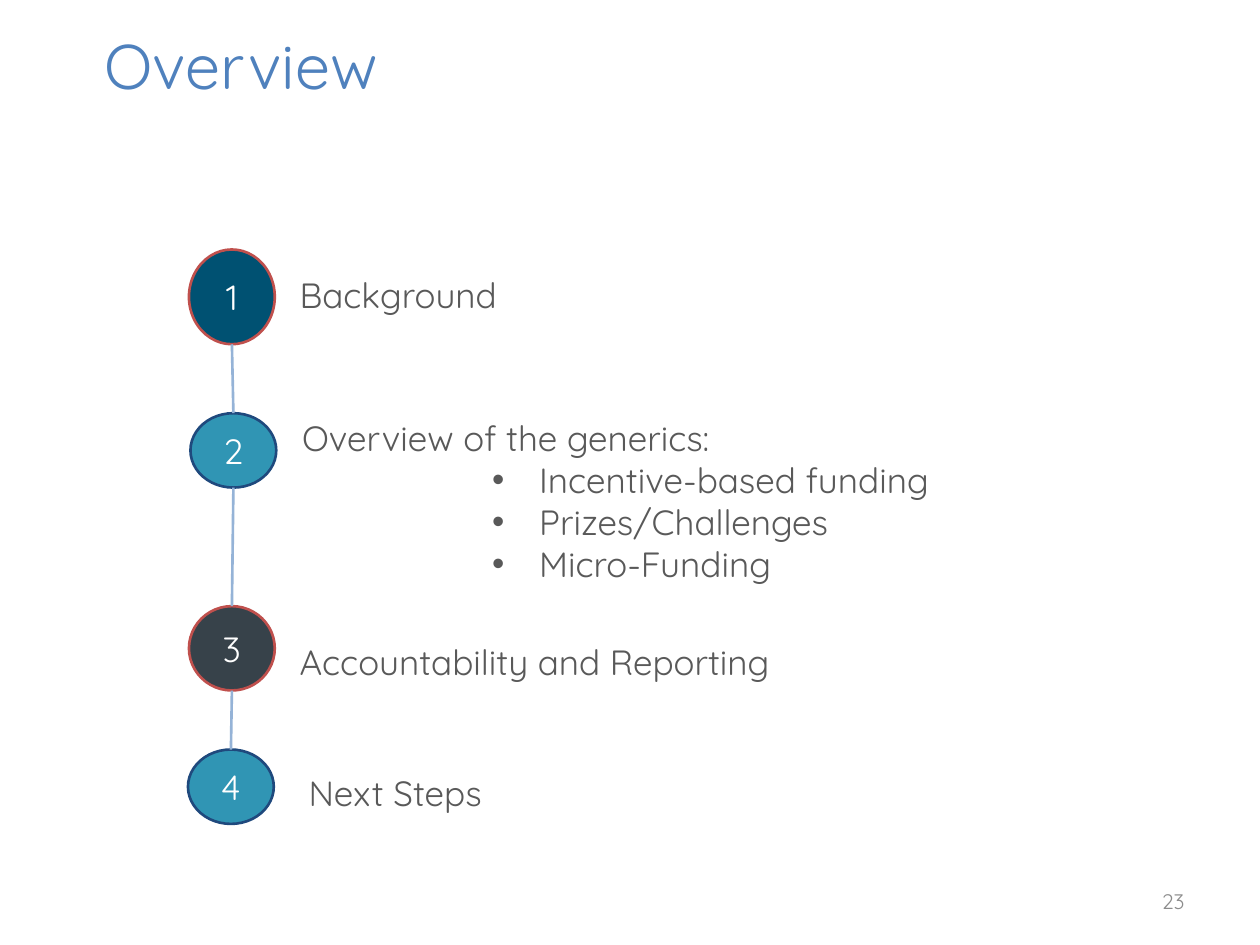
import pptx
import pptx.dml.color
import pptx.enum.shapes
import pptx.enum.text
import pptx.oxml.ns
import pptx.util
from lxml import etree

Cm, Pt = pptx.util.Cm, pptx.util.Pt
ALIGN = pptx.enum.text.PP_ALIGN
ANCHOR = pptx.enum.text.MSO_ANCHOR
SHAPES = pptx.enum.shapes.MSO_SHAPE
CONNECTOR = pptx.enum.shapes.MSO_CONNECTOR
qn = pptx.oxml.ns.qn

FONT = "Quicksand"
GREY = "595959"

# Circle: number, left, top, height, fill, outline (cm)
CIRCLE_WIDTH = 1.73
CIRCLES = [
    ("1", 3.81, 5.03, 1.91, "005172", "C0504D"),
    ("2", 3.84, 8.33, 1.5, "3095B4", "1F497D"),
    ("3", 3.81, 12.22, 1.7, "37424A", "C0504D"),
    ("4", 3.79, 15.11, 1.5, "3095B4", "1F497D"),
]

# Topic: box (cm), anchor, heading, bullets
TOPICS = [
    ((5.79, 5.05, 18.39, 1.78), ANCHOR.MIDDLE, "Background", []),
    ((5.84, 8.23, 18.39, 3.71), ANCHOR.MIDDLE, "Overview of the generics:",
     ["Incentive-based funding", "Prizes/Challenges", "Micro-Funding"]),
    ((5.79, 12.78, 12.7, 1.12), ANCHOR.TOP, "Accountability and Reporting", []),
    ((5.97, 15.42, 12.7, 1.12), ANCHOR.TOP, "Next Steps", []),
]


def rgb(value):
    return pptx.dml.color.RGBColor.from_string(value)


def write(p, text, size, color, align=ALIGN.LEFT):
    p.alignment = align
    r = p.add_run()
    r.text = text
    for name, value in {"name": FONT, "size": Pt(size)}.items():
        setattr(r.font, name, value)
    r.font.color.rgb = rgb(color)


def add_text(s, box, text, size, color, anchor=ANCHOR.TOP, align=ALIGN.LEFT):
    tf = s.shapes.add_textbox(*map(Cm, box)).text_frame
    for name, value in {"word_wrap": True, "vertical_anchor": anchor}.items():
        setattr(tf, name, value)
    write(tf.paragraphs[0], text, size, color, align)
    return tf


def add_bullet(tf, text):
    p = tf.add_paragraph()
    p.level = 3
    pPr = p._p.get_or_add_pPr()
    pPr.set("marL", str(Cm(4.78)))
    pPr.set("indent", str(Cm(-0.95)))
    etree.SubElement(pPr, qn("a:buFont")).set("typeface", "Arial")
    etree.SubElement(pPr, qn("a:buChar")).set("char", "•")
    write(p, text, 20, GREY)


def add_circle(s, number, left, top, height, fill, outline):
    sp = s.shapes.add_shape(SHAPES.OVAL, Cm(left), Cm(top), Cm(CIRCLE_WIDTH), Cm(height))
    sp.shadow.inherit = False
    sp.fill.solid()
    sp.fill.fore_color.rgb = rgb(fill)
    sp.line.color.rgb = rgb(outline)
    sp.line.width = Pt(1.5)
    tf = sp.text_frame
    tf.vertical_anchor = ANCHOR.MIDDLE
    write(tf.paragraphs[0], number, 20, "FFFFFF", ALIGN.CENTER)
    return sp


def add_link(s, upper, lower):
    line = s.shapes.add_connector(
        CONNECTOR.STRAIGHT,
        upper.left + upper.width // 2, upper.top + upper.height,
        lower.left + lower.width // 2, lower.top)
    line.line.color.rgb = rgb("95B3D7")
    line.line.width = Pt(1.5)
    etree.SubElement(line._element.spPr, qn("a:effectLst"))


def main():
    prs = pptx.Presentation()
    prs.slide_width, prs.slide_height = Cm(25.4), Cm(19.05)
    s = prs.slides.add_slide(prs.slide_layouts[6])

    # Title and page number
    tf = add_text(s, (2.11, 0.53, 15.09, 1.8), "Overview", 36, "4F81BD")
    for side in ("left", "top", "right", "bottom"):
        setattr(tf, f"margin_{side}", 0)
    add_text(s, (18.21, 17.65, 5.92, 1.02), "23", 12, "8C8C8C", ANCHOR.MIDDLE, ALIGN.RIGHT)

    # Numbered circles, linked from top to bottom
    circles = [add_circle(s, *circle) for circle in CIRCLES]
    for upper, lower in zip(circles, circles[1:]):
        add_link(s, upper, lower)

    # Topics
    for box, anchor, heading, bullets in TOPICS:
        tf = add_text(s, box, heading, 20, GREY, anchor)
        for bullet in bullets:
            add_bullet(tf, bullet)

    prs.save("out.pptx")


if __name__ == "__main__":
    main()
